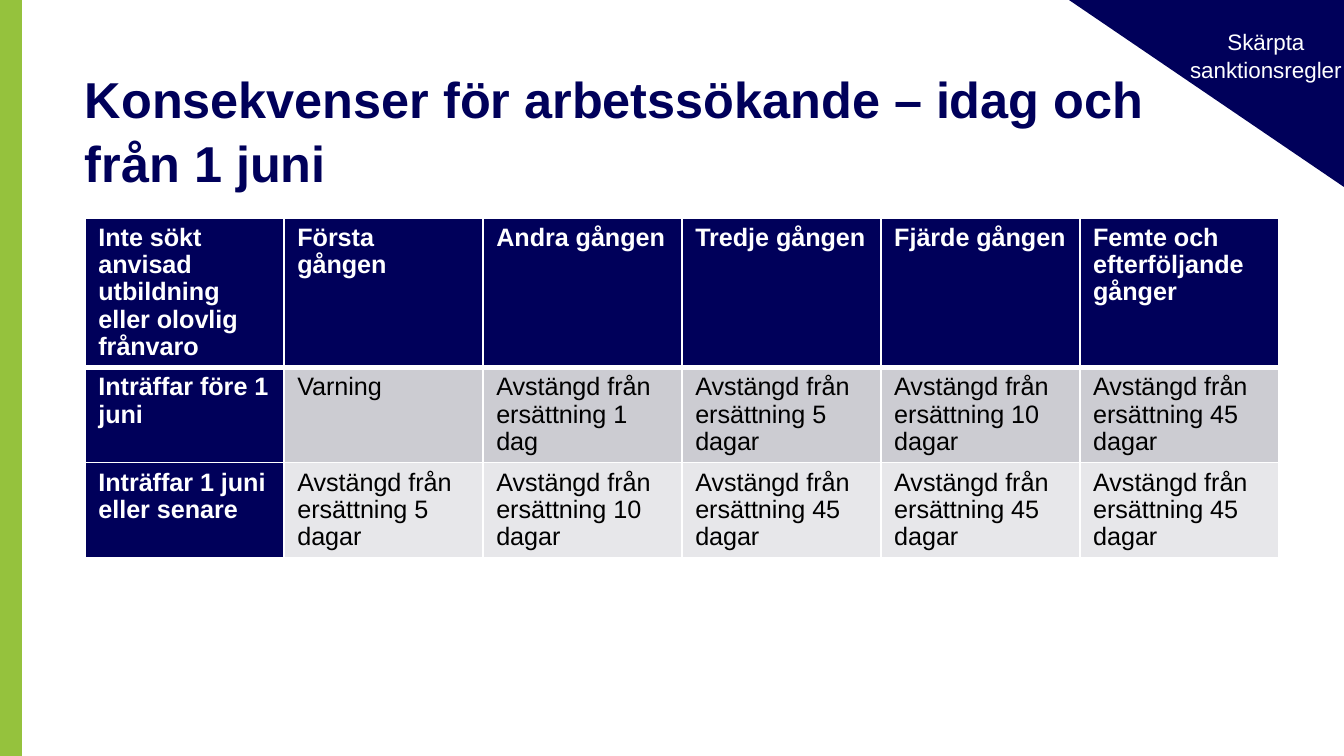
"""Build the slide on consequences for job seekers before and after 1 June."""
from dataclasses import dataclass

from lxml import etree
from pptx import Presentation
from pptx import util as u
from pptx.dml.color import RGBColor
from pptx.enum import shapes, text
from pptx.oxml import ns

SLIDE_WIDTH, SLIDE_HEIGHT = 1344, 756
EMU_PER_PX = u.Inches(10) / SLIDE_WIDTH


@dataclass(frozen=True)
class Theme:
    font: str = "Arial"
    navy: str = "00005A"
    green: str = "95C23D"
    white: str = "FFFFFF"
    black: str = "000000"
    bands: tuple = ("CCCCD2", "E7E7EA")
    title_size: float = 27
    table_size: float = 13.5
    tag_size: float = 12
    loose: float = 1.05
    tight: float = 0.97
    rule: float = 1
    header_rule: float = 3


THEME = Theme()

HEADINGS = [
    "Inte sökt anvisad utbildning eller olovlig frånvaro",
    "Första gången",
    "Andra gången",
    "Tredje gången",
    "Fjärde gången",
    "Femte och efterföljande gånger",
]


def suspended(days):
    return f"Avstängd från ersättning {days} {'dag' if days == 1 else 'dagar'}"


CONSEQUENCES = [
    HEADINGS,
    ["Inträffar före 1 juni", "Varning", *map(suspended, (1, 5, 10, 45))],
    ["Inträffar 1 juni eller senare", *map(suspended, (5, 10, 45, 45, 45))],
]


def px(*lengths):
    return [u.Emu(round(length * EMU_PER_PX)) for length in lengths]


def write(frame, words, size, color, bold=False, spacing=THEME.loose, align=text.PP_ALIGN.LEFT):
    frame.word_wrap = True
    paragraph = frame.paragraphs[0]
    paragraph.text = words
    paragraph.alignment = align
    paragraph.line_spacing = spacing
    font = paragraph.font
    font.name, font.size, font.bold = THEME.font, u.Pt(size), bold
    font.color.rgb = RGBColor.from_string(color)


def clear_insets(frame):
    frame.margin_left = frame.margin_right = 0


def add_block(slide, preset, box, color):
    block = slide.shapes.add_shape(preset, *px(*box))
    block.shadow.inherit = False
    block.fill.solid()
    block.fill.fore_color.rgb = RGBColor.from_string(color)
    block.line.fill.background()
    return block


def set_title(slide, words, box):
    title = slide.shapes.title
    title.left, title.top, title.width, title.height = px(*box)
    frame = title.text_frame
    clear_insets(frame)
    frame.margin_top = frame.margin_bottom = 0
    frame.vertical_anchor = text.MSO_ANCHOR.MIDDLE
    write(frame, words, THEME.title_size, THEME.navy, bold=True)


def add_tag(slide, words, box):
    frame = slide.shapes.add_textbox(*px(*box)).text_frame
    clear_insets(frame)
    write(frame, words, THEME.tag_size, THEME.white, align=text.PP_ALIGN.CENTER)


def set_borders(cell, widths):
    properties = cell._tc.get_or_add_tcPr()
    for side, width in widths.items():
        line = etree.SubElement(properties, ns.qn(f"a:ln{side}"), w=str(u.Pt(width)))
        fill = etree.SubElement(line, ns.qn("a:solidFill"))
        etree.SubElement(fill, ns.qn("a:srgbClr"), val=THEME.white)


def format_cell(cell, words, row, column):
    is_heading = row == 0 or column == 0
    set_borders(cell, {
        "L": THEME.rule,
        "R": THEME.rule,
        "T": THEME.header_rule if row == 1 else THEME.rule,
        "B": THEME.header_rule if row == 0 else THEME.rule,
    })
    cell.fill.solid()
    background = THEME.navy if is_heading else THEME.bands[row - 1]
    cell.fill.fore_color.rgb = RGBColor.from_string(background)
    color = THEME.white if is_heading else THEME.black
    write(cell.text_frame, words, THEME.table_size, color, is_heading, THEME.tight)


def add_consequences(slide, rows, left, top, column_width, row_height, height):
    columns = len(rows[0])
    frame = slide.shapes.add_table(
        len(rows), columns, *px(left, top, columns * column_width, height))
    table = frame.table
    table.first_col = True
    for table_row in table.rows:
        table_row.height, = px(row_height)
    frame.height, = px(height)
    for row, entries in enumerate(rows):
        for column, words in enumerate(entries):
            format_cell(table.cell(row, column), words, row, column)


def main():
    deck = Presentation()
    deck.slide_width, deck.slide_height = px(SLIDE_WIDTH, SLIDE_HEIGHT)
    slide = deck.slides.add_slide(deck.slide_layouts[5])
    preset = shapes.MSO_SHAPE

    add_block(slide, preset.RECTANGLE, (0, 0, 22, SLIDE_HEIGHT), THEME.green)
    set_title(slide, "Konsekvenser för arbetssökande – idag och från 1 juni", (85, 63, 1091, 132))
    add_consequences(slide, CONSEQUENCES, left=85, top=218, column_width=199,
                     row_height=55, height=372)
    corner = add_block(slide, preset.ISOSCELES_TRIANGLE, (1069, 0, 275, 187), THEME.navy)
    corner.adjustments[0] = 0
    corner.rotation = 180
    add_tag(slide, "Skärpta sanktionsregler", (1176, 20, 180, 67))

    deck.save("out.pptx")


if __name__ == "__main__":
    main()
